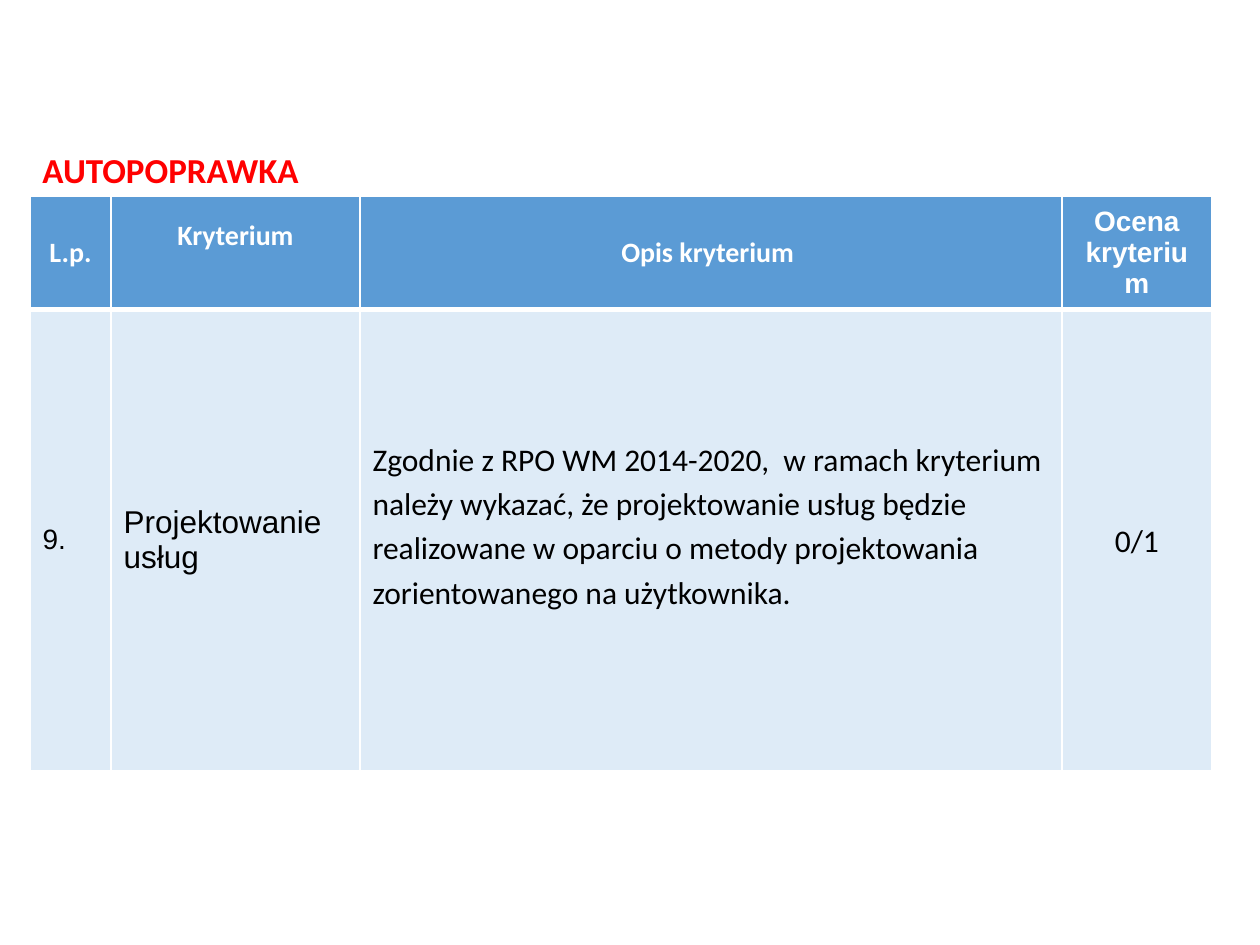
from lxml import etree
from pptx import Presentation
from pptx.dml.color import RGBColor
from pptx.enum.text import MSO_ANCHOR, PP_ALIGN
from pptx.oxml.ns import qn
from pptx.util import Pt

PX = 914400 / 126
LEFT, CENTER = PP_ALIGN.LEFT, PP_ALIGN.CENTER
MIDDLE = MSO_ANCHOR.MIDDLE

COLORS = {
    "title": "FF0000",
    "header": "5B9BD5",
    "body": "DEEBF7",
    "white": "FFFFFF",
    "black": "000000",
}

COLUMNS = [81, 249, 702, 150]
ROWS = [113, 461]

# Each cell: text, font, size, alignment, line spacing, margins
HEADER = [
    ("L.p.", "Calibri", 16, CENTER, None, {}),
    ("Kryterium", "Calibri", 16, CENTER, None, {"bottom": 40}),
    ("Opis kryterium ", "Calibri", 16, CENTER, None, {}),
    ("Ocena kryterium", "Arial", 16, CENTER, None, {}),
]
BODY = [
    ("9.", "Arial", 16, LEFT, None, {}),
    ("Projektowanie \vusług", "Arial", 18, LEFT, None, {}),
    ("Zgodnie z RPO WM 2014-2020,  w ramach kryterium należy wykazać, że "
     "projektowanie usług będzie realizowane w oparciu o metody projektowania "
     "zorientowanego na użytkownika.", "Calibri", 18, LEFT, 1.15, {"bottom": 38}),
    ("0/1", "Calibri", 18, CENTER, 1.07,
     {"left": 5, "top": 5, "right": 5, "bottom": 5}),
]


def px(n):
    return round(n * PX)


def rgb(name):
    return RGBColor.from_string(COLORS[name])


def style(p, font, size, color, bold):
    p.font.name = font
    p.font.size = Pt(size)
    p.font.bold = bold
    p.font.color.rgb = rgb(color)


def set_borders(cell, widths):
    """Draw white borders; widths are points for left, right, top, bottom."""
    tc_pr = cell._tc.get_or_add_tcPr()
    for i, (side, width) in enumerate(zip("LRTB", widths)):
        ln = etree.Element(qn(f"a:ln{side}"), w=str(Pt(width)))
        fill = etree.SubElement(ln, qn("a:solidFill"))
        etree.SubElement(fill, qn("a:srgbClr"), val=COLORS["white"])
        tc_pr.insert(i, ln)


def fill_cell(cell, content, is_header):
    text, font, size, align, spacing, margins = content
    cell.text_frame.text = text
    cell.vertical_anchor = MIDDLE
    for side, margin in margins.items():
        setattr(cell, f"margin_{side}", px(margin))
    p = cell.text_frame.paragraphs[0]
    p.alignment = align
    if spacing:
        p.line_spacing = spacing
    style(p, font, size, "white" if is_header else "black", is_header)
    cell.fill.solid()
    cell.fill.fore_color.rgb = rgb("header" if is_header else "body")
    set_borders(cell, (1, 1, 1, 3) if is_header else (1, 1, 3, 1))


def add_title(s, x, y, w, h):
    tf = s.shapes.add_textbox(px(x), px(y), px(w), px(h)).text_frame
    tf.word_wrap = True
    tf.vertical_anchor = MIDDLE
    p = tf.paragraphs[0]
    p.text = "AUTOPOPRAWKA"
    style(p, "Calibri", 20, "title", True)


def add_criteria_table(s, x, y):
    table = s.shapes.add_table(len(ROWS), len(COLUMNS), px(x), px(y),
                               px(sum(COLUMNS)), px(sum(ROWS))).table
    for column, width in zip(table.columns, COLUMNS):
        column.width = px(width)
    for row, height in zip(table.rows, ROWS):
        row.height = px(height)
    for i, contents in enumerate((HEADER, BODY)):
        for j, content in enumerate(contents):
            fill_cell(table.cell(i, j), content, is_header=i == 0)


def main():
    prs = Presentation()
    prs.slide_width, prs.slide_height = px(1260), px(945)
    s = prs.slides.add_slide(prs.slide_layouts[6])
    # Heading above the table
    add_title(s, 30, 142, 466, 55)
    # Criterion with its description and score
    add_criteria_table(s, 30, 196)
    prs.save("out.pptx")


if __name__ == "__main__":
    main()
